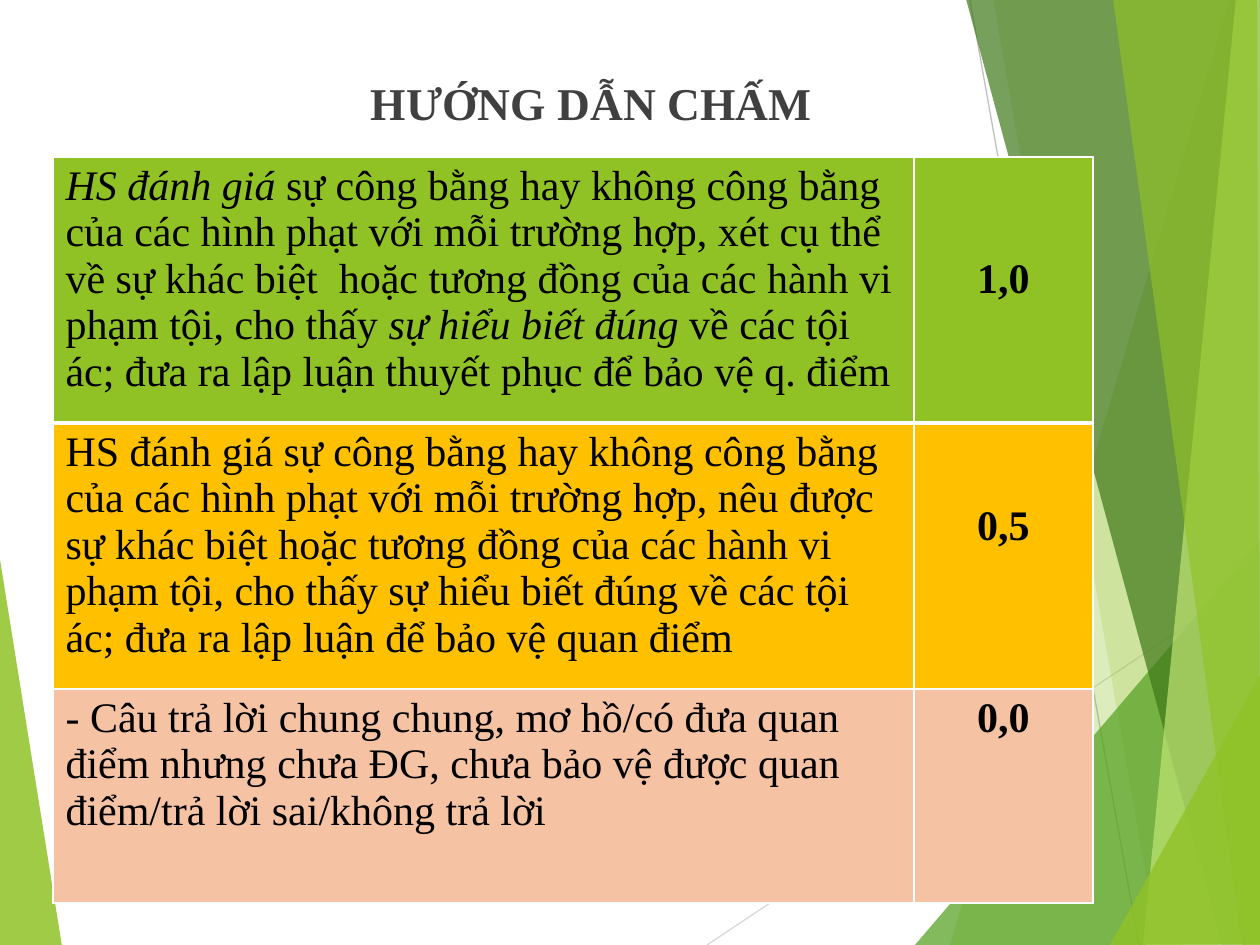
from lxml import etree
from pptx import Presentation
from pptx.dml.color import RGBColor
from pptx.enum.shapes import MSO_CONNECTOR
from pptx.enum.text import PP_ALIGN
from pptx.oxml.ns import qn
from pptx.util import Pt

STRAIGHT = MSO_CONNECTOR.STRAIGHT
CENTER, LEFT = PP_ALIGN.CENTER, PP_ALIGN.LEFT
PX = 914400 / 126
WIDTH, HEIGHT = 1260, 945
FONT = "Times New Roman"
COLORS = {
    "lime": "90C226", "green": "54A021", "dark_green": "3F7819",
    "pale_lime": "C0E474", "light_gray": "D9D9D9", "gray": "BFBFBF",
    "title": "404040", "text": "000000", "border": "FFFFFF",
    "amber": "FFC000", "peach": "F5C2A3",
}

# Colour, opacity in percent, corner points
LEFT_FACET = ("lime", 85, [(-1, 553), (62, 946), (-1, 945)])
RIGHT_FACETS = [
    ("lime", 30, [(1229, 0), (950, 945), (1263, 946), (1262, 1)]),
    ("lime", 20, [(993, -1), (1158, 945), (1261, 945), (1261, -1)]),
    ("green", 72, [(915, 945), (1260, 541), (1261, 945)]),
    ("dark_green", 70, [(966, -1), (1222, 945), (1261, 944), (1261, -1)]),
    ("pale_lime", 70, [(1236, -1), (1143, 945), (1261, 945), (1260, -1)]),
    ("lime", 65, [(1113, -1), (1242, 945), (1260, 945), (1257, -1)]),
    ("lime", 80, [(1110, 945), (1261, 674), (1261, 944)]),
]
RAYS = [("light_gray", (707, 945, 1261, 576)), ("gray", (970, 0, 1139, 945))]

# Fill, height, bottom border in points, criterion as (text, italic) runs,
# score, top margin of the score
RUBRIC = [
    ("lime", 266, 3, [
        ("HS đánh giá ", True),
        ("sự công bằng hay không công bằng của các hình phạt với mỗi trường hợp, "
         "xét cụ thể về sự khác biệt  hoặc tương đồng của các hành vi phạm tội, "
         "cho thấy ", False),
        ("sự hiểu biết đúng ", True),
        ("về các tội ác; đưa ra lập luận thuyết phục để bảo vệ q. điểm", False),
    ], "1,0", 99),
    ("amber", 266, 1, [
        ("HS đánh giá sự công bằng hay không công bằng của các hình phạt với mỗi "
         "trường hợp, nêu được sự khác biệt hoặc tương đồng của các hành vi phạm "
         "tội, cho thấy sự hiểu biết đúng về các tội ác; đưa ra lập luận để bảo vệ "
         "quan điểm", False),
    ], "0,5", 80),
    ("peach", 214, 1, [
        ("- Câu trả lời chung chung, mơ hồ/có đưa quan điểm nhưng chưa ĐG, chưa bảo "
         "vệ được quan điểm/trả lời sai/không trả lời", False),
    ], "0,0", 6),
]


def px(n):
    return round(n * PX)


def rgb(name):
    return RGBColor.from_string(COLORS[name])


def add_run(p, text, color, **font):
    r = p.add_run()
    r.text = text
    for name, value in {"name": FONT, **font}.items():
        setattr(r.font, name, value)
    r.font.color.rgb = rgb(color)


def add_facet(slide, x, y, color, opacity, points):
    corners = [(x + dx, y + dy) for dx, dy in points]
    builder = slide.shapes.build_freeform(*corners[0], scale=PX)
    builder.add_line_segments(corners[1:], close=True)
    s = builder.convert_to_shape()
    s.shadow.inherit = False
    s.fill.solid()
    s.fill.fore_color.rgb = rgb(color)
    s.line.fill.background()
    clr = s.fill._xPr.find(".//" + qn("a:srgbClr"))
    etree.SubElement(clr, qn("a:alpha"), val=str(opacity * 1000))


def add_ray(slide, x, y, color, ends):
    x1, y1, x2, y2 = ends
    s = slide.shapes.add_connector(
        STRAIGHT, px(x + x1), px(y + y1), px(x + x2), px(y + y2))
    s.line.color.rgb = rgb(color)
    s.line.width = Pt(0.75)
    etree.SubElement(s._element.spPr, qn("a:effectLst"))


def add_backdrop(slide, x, y):
    add_facet(slide, x, y, *LEFT_FACET)
    for ray in RAYS:
        add_ray(slide, x, y, *ray)
    for facet in RIGHT_FACETS:
        add_facet(slide, x, y, *facet)


def add_title(slide, x, y, w, h):
    tf = slide.shapes.add_textbox(px(x), px(y), px(w), px(h)).text_frame
    tf.word_wrap = True
    tf.margin_top = px(12)
    p = tf.paragraphs[0]
    p.alignment = CENTER
    add_run(p, "HƯỚNG DẪN CHẤM", "title", size=Pt(26), bold=True)


def set_borders(cell, widths):
    """Draw borders, which the schema puts ahead of the cell's fill."""
    tcPr = cell._tc.get_or_add_tcPr()
    for i, (side, width) in enumerate(widths.items()):
        ln = etree.Element(qn("a:ln" + side), w=str(Pt(width)))
        fill = etree.SubElement(ln, qn("a:solidFill"))
        etree.SubElement(fill, qn("a:srgbClr"), val=COLORS["border"])
        tcPr.insert(i, ln)


def fill_cell(cell, color, borders, runs, align, top, bold=False):
    cell.fill.solid()
    cell.fill.fore_color.rgb = rgb(color)
    set_borders(cell, borders)
    cell.margin_top = px(top)
    p = cell.text_frame.paragraphs[0]
    p.alignment = align
    for text, italic in runs:
        add_run(p, text, "text", size=Pt(24), bold=bold, italic=italic)


def add_rubric(slide, x, y, w, score_w):
    h = sum(row[1] for row in RUBRIC)
    table = slide.shapes.add_table(
        len(RUBRIC), 2, px(x), px(y), px(w), px(h)).table
    table.columns[0].width = px(w - score_w)
    table.columns[1].width = px(score_w)
    top_border = 1
    for i, (color, height, bottom, criterion, score, top) in enumerate(RUBRIC):
        table.rows[i].height = px(height)
        borders = {"L": 1, "R": 1, "T": top_border, "B": bottom}
        fill_cell(table.cell(i, 0), color, borders, criterion, LEFT, 6)
        fill_cell(table.cell(i, 1), color, borders, [(score, False)], CENTER,
                  top, bold=True)
        top_border = bottom


def main():
    prs = Presentation()
    prs.slide_width, prs.slide_height = px(WIDTH), px(HEIGHT)
    slide = prs.slides.add_slide(prs.slide_layouts[6])
    add_backdrop(slide, 0, 0)
    add_title(slide, 29, 63, 1125, 819)
    add_rubric(slide, 53, 157, 1040, 179)
    prs.save("out.pptx")


if __name__ == "__main__":
    main()
